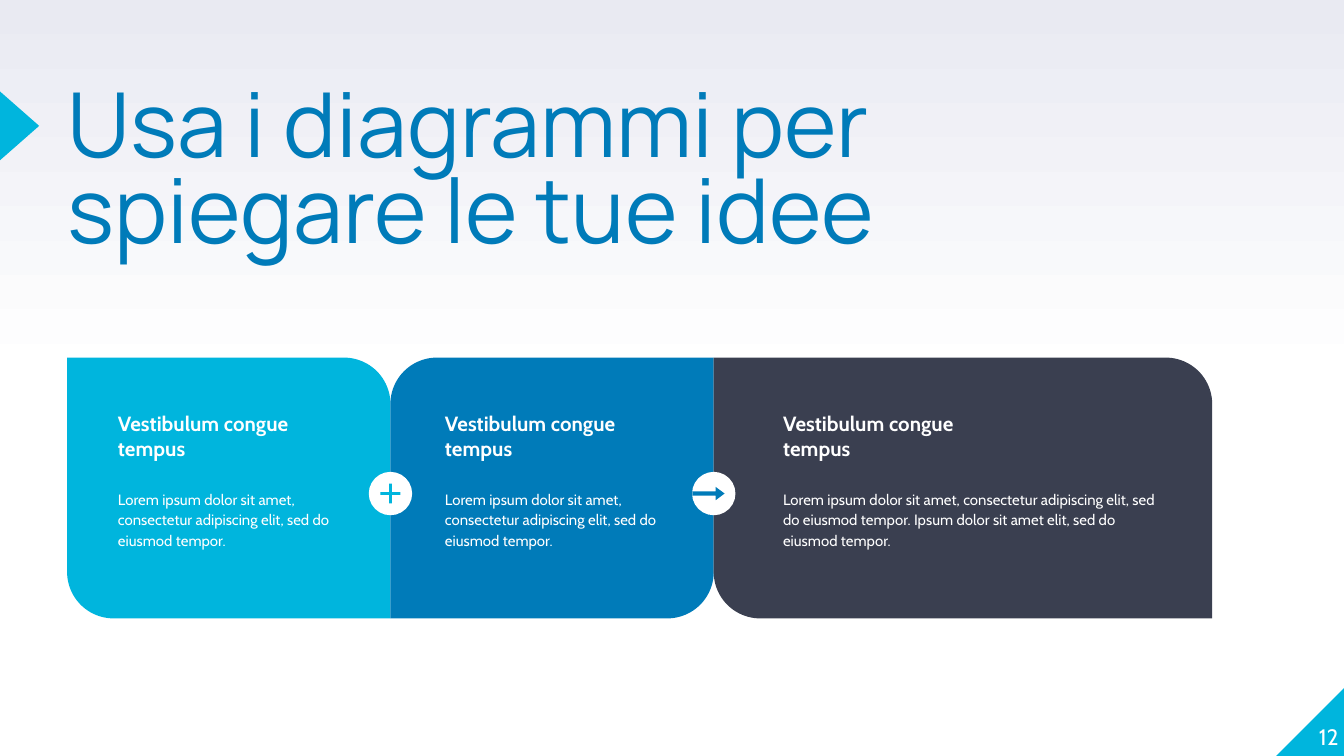
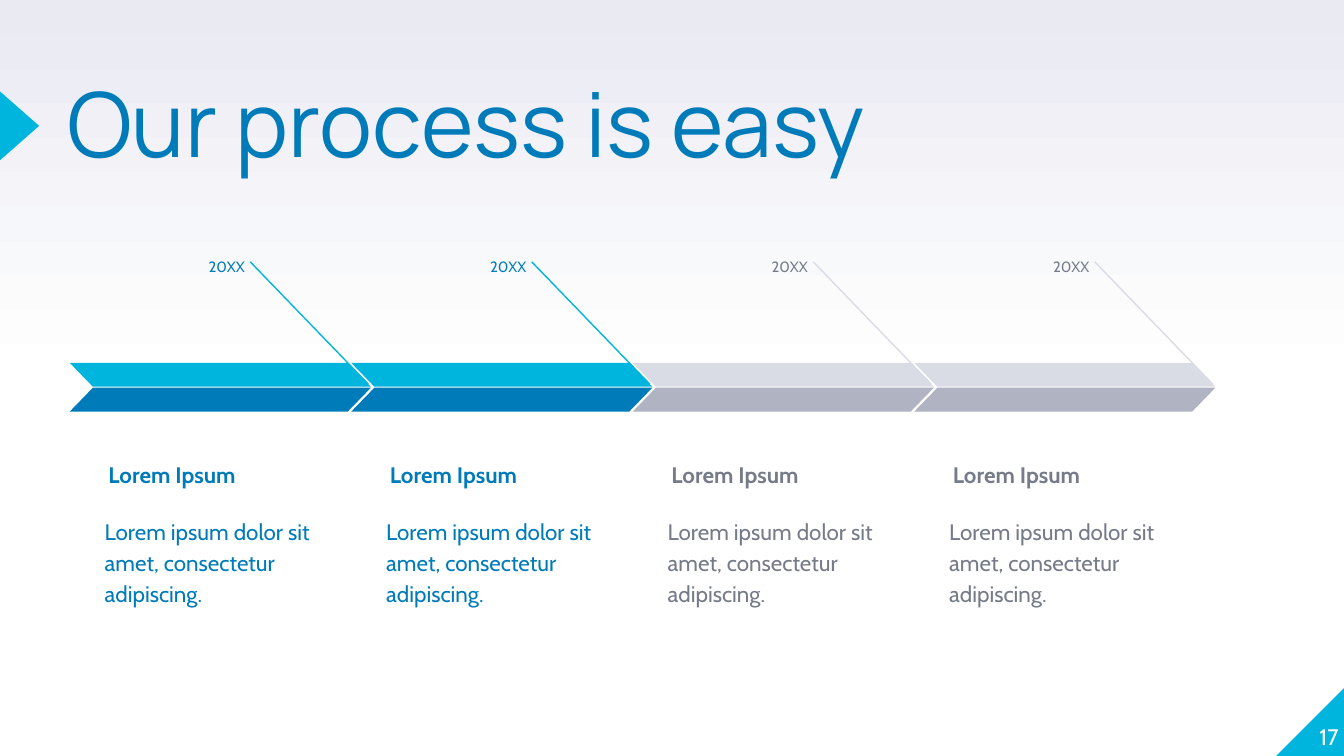
from copy import deepcopy
from dataclasses import dataclass

from lxml.etree import SubElement
from pptx import Presentation
from pptx.dml.color import RGBColor
from pptx.enum.shapes import MSO_CONNECTOR, MSO_SHAPE
from pptx.enum.text import MSO_ANCHOR, MSO_AUTO_SIZE, PP_ALIGN
from pptx.oxml.ns import qn
from pptx.util import Cm, Pt


@dataclass(frozen=True)
class Theme:
    cyan: str = "00B5DD"
    blue: str = "007BB9"
    slate: str = "3A3F50"
    grey: str = "757B89"
    silver: str = "DADCE5"
    steel: str = "B0B3C1"
    white: str = "FFFFFF"
    mist: str = "E9EAF2"
    title_font: str = "Manrope"
    body_font: str = "Cabin"
    title_size: int = 48
    label_size: int = 12
    card_size: int = 11
    small_size: int = 8


THEME = Theme()

DIAGRAM = {
    "title": "Usa i diagrammi per spiegare le tue idee",
    "number": "12",
    "cards": [
        {"heading": "Vestibulum congue tempus",
         "body": "Lorem ipsum dolor sit amet, consectetur adipiscing elit, sed do eiusmod tempor.",
         "color": THEME.cyan, "width": 6.11, "indent": 0.71, "text_width": 4.57},
        {"heading": "Vestibulum congue tempus",
         "body": "Lorem ipsum dolor sit amet, consectetur adipiscing elit, sed do eiusmod tempor.",
         "color": THEME.blue, "width": 6.11, "indent": 0.78, "text_width": 4.57},
        {"heading": "Vestibulum congue\ntempus",
         "body": "Lorem ipsum dolor sit amet, consectetur adipiscing elit, sed do eiusmod tempor. "
                 "Ipsum dolor sit amet elit, sed do eiusmod tempor.",
         "color": THEME.slate, "width": 9.42, "indent": 1.06, "text_width": 7.59},
    ],
    "badges": [
        {"sign": MSO_SHAPE.MATH_PLUS, "color": THEME.cyan, "shift": 0,
         "size": (0.51, 0.51), "adjust": [0.099]},
        {"sign": MSO_SHAPE.RIGHT_ARROW, "color": THEME.blue, "shift": -0.1,
         "size": (0.61, 0.25), "adjust": [0.32, 0.67]},
    ],
}

DONE = {"upper": THEME.cyan, "lower": THEME.blue, "text": THEME.blue}
PENDING = {"upper": THEME.silver, "lower": THEME.steel, "text": THEME.grey}
STEP_TEXT = ("20XX", "Lorem Ipsum", "Lorem ipsum dolor sit amet, consectetur adipiscing.")
PROCESS = {
    "title": "Our process is easy",
    "number": "17",
    "steps": [(*STEP_TEXT, stage) for stage in (DONE, DONE, PENDING, PENDING)],
}


def rgb(color):
    return RGBColor.from_string(color)


def apply(target, values):
    for name, value in values.items():
        setattr(target, name, value)


def write(frame, text, color, size, font=THEME.body_font, bold=False, inset=0.0,
          anchor=MSO_ANCHOR.TOP, align=PP_ALIGN.LEFT, spacing=1.0, after=0):
    margin = Cm(inset)
    apply(frame, {"word_wrap": True, "auto_size": MSO_AUTO_SIZE.NONE,
                  "vertical_anchor": anchor, "margin_left": margin, "margin_right": margin,
                  "margin_top": margin, "margin_bottom": margin})
    paragraph = frame.paragraphs[0]
    paragraph.text = text
    apply(paragraph, {"alignment": align, "line_spacing": spacing, "space_after": Pt(after)})
    for run in paragraph.runs:
        apply(run.font, {"name": font, "size": Pt(size), "bold": bold})
        run.font.color.rgb = rgb(color)


def add_text(shapes, box, text, color, size, **style):
    frame = shapes.add_textbox(*map(Cm, box)).text_frame
    write(frame, text, color, size, **style)


def add_block(shapes, kind, box, color, adjust=(), flip=False, rotation=0):
    block = shapes.add_shape(kind, *map(Cm, box))
    block.shadow.inherit = False
    block.fill.solid()
    block.fill.fore_color.rgb = rgb(color)
    block.line.fill.background()
    block.rotation = rotation
    for index, value in enumerate(adjust):
        block.adjustments[index] = value
    if flip:
        block.element.xpath("./p:spPr/a:xfrm")[0].set("flipH", "1")
    return block


def add_line(shapes, start, end, color):
    line = shapes.add_connector(MSO_CONNECTOR.STRAIGHT, *map(Cm, (*start, *end)))
    line.line.color.rgb = rgb(color)
    line.line.width = Pt(0.75)
    SubElement(line.element.spPr, qn("a:effectLst"))


def decorate(layout, slide):
    fill = layout.background.fill
    fill.gradient()
    fill.gradient_angle = 90
    stops = layout.element.xpath(".//p:bg//a:gsLst")[0]
    stops.append(deepcopy(stops[0]))
    tones = [(0, THEME.white), (0.5, THEME.white), (1, THEME.mist)]
    for stop, (position, color) in zip(fill.gradient_stops, tones):
        stop.position = position
        stop.color.rgb = rgb(color)
    corner = add_block(slide.shapes, MSO_SHAPE.RIGHT_TRIANGLE, (24.12, 12.99, 1.3, 1.3),
                       THEME.cyan, flip=True)
    pointer = add_block(slide.shapes, MSO_SHAPE.ISOSCELES_TRIANGLE, (-0.28, 2.01, 1.3, 0.74),
                        THEME.cyan, [0.5], rotation=90)
    for shape_id, mark in enumerate((corner, pointer), 100):
        mark.element.xpath("./p:nvSpPr/p:cNvPr")[0].set("id", str(shape_id))
        layout.shapes.element.append(mark.element)


def add_page(slide, content):
    title = slide.shapes.title
    apply(title, {"left": Cm(1.27), "top": Cm(1.68), "width": Cm(15.67), "height": Cm(3)})
    write(title.text_frame, content["title"], THEME.blue, THEME.title_size,
          font=THEME.title_font, spacing=0.8)
    add_text(slide.shapes, (24.03, 12.88, 1.27, 1.3), content["number"], THEME.white,
             THEME.label_size, anchor=MSO_ANCHOR.BOTTOM, align=PP_ALIGN.RIGHT)


def draw_diagram(slide, content):
    left, top, height = 1.27, 6.76, 4.93
    badge, badge_middle = 0.82, 9.33
    joints = []
    for index, card in enumerate(content["cards"]):
        shapes = slide.shapes.add_group_shape().shapes
        add_block(shapes, MSO_SHAPE.ROUND_2_DIAG_RECTANGLE, (left, top, card["width"], height),
                  card["color"], [0, 0.178], flip=index % 2 == 1)
        text_left, text_width = left + card["indent"], card["text_width"]
        add_text(shapes, (text_left, 7.52, text_width, 1.45), card["heading"], THEME.white,
                 THEME.card_size, bold=True, inset=0.25)
        add_text(shapes, (text_left, 8.97, text_width, 1.6), card["body"], THEME.white,
                 THEME.small_size, inset=0.25, spacing=1.15, after=16)
        left += card["width"]
        joints.append(left)
    for joint, mark in zip(joints, content["badges"]):
        shapes = slide.shapes.add_group_shape().shapes
        add_block(shapes, MSO_SHAPE.OVAL,
                  (joint - badge / 2, badge_middle - badge / 2, badge, badge), THEME.white)
        width, tall = mark["size"]
        add_block(shapes, mark["sign"],
                  (joint + mark["shift"] - width / 2, badge_middle - tall / 2, width, tall),
                  mark["color"], mark["adjust"])


def draw_process(slide, content):
    first_left, pitch = 1.32, 5.32
    for index, (year, heading, body, stage) in enumerate(content["steps"]):
        left = first_left + index * pitch
        shapes = slide.shapes.add_group_shape().shapes
        add_text(shapes, (left + 1.63, 4.57, 1.93, 0.74), year, stage["text"], THEME.small_size,
                 inset=0.25, align=PP_ALIGN.RIGHT, spacing=1.15, after=16)
        add_text(shapes, (left + 0.48, 8.07, 4.67, 1.4), heading, stage["text"],
                 THEME.label_size, bold=True, inset=0.25, anchor=MSO_ANCHOR.BOTTOM, spacing=1.15)
        add_text(shapes, (left + 0.41, 9.47, 4.8, 2.29), body, stage["text"], THEME.label_size,
                 inset=0.25, spacing=1.15, after=16)
        add_line(shapes, (left + 3.41, 4.95), (left + 5.64, 7.26), stage["upper"])
        for top, half, flip in ((6.86, "upper", True), (7.33, "lower", False)):
            add_block(shapes, MSO_SHAPE.PARALLELOGRAM, (left, top, 5.69, 0.45), stage[half],
                      [0.97], flip=flip)


def main():
    deck = Presentation()
    apply(deck, {"slide_width": Cm(25.4), "slide_height": Cm(14.29)})
    layout = deck.slide_layouts[5]
    for content, draw in ((DIAGRAM, draw_diagram), (PROCESS, draw_process)):
        slide = deck.slides.add_slide(layout)
        if len(deck.slides) == 1:
            decorate(layout, slide)
        add_page(slide, content)
        draw(slide, content)
    deck.save("out.pptx")


if __name__ == "__main__":
    main()
